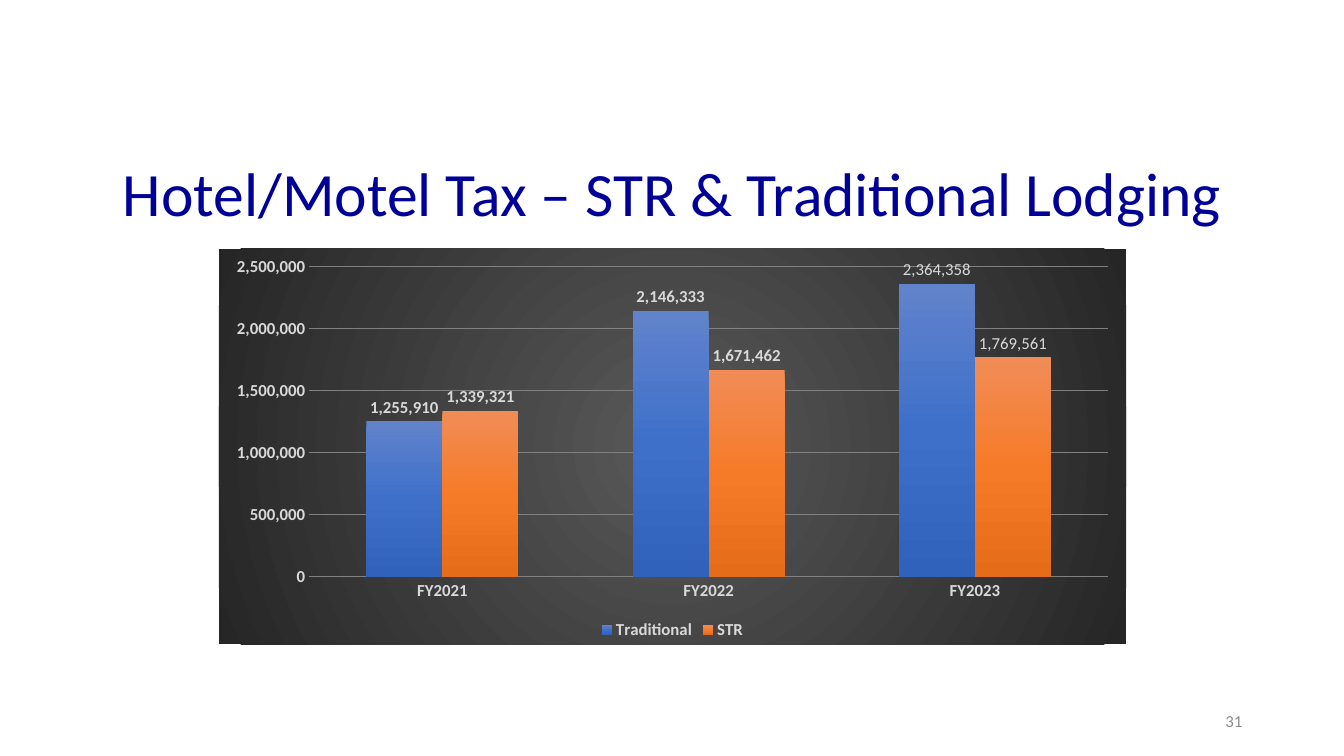
from lxml import etree
from pptx import Presentation
from pptx.chart.data import CategoryChartData
from pptx.dml.color import RGBColor
from pptx.enum.chart import XL_CHART_TYPE as ChartType
from pptx.enum.chart import XL_LABEL_POSITION as LabelPosition
from pptx.enum.chart import XL_LEGEND_POSITION as LegendPosition
from pptx.enum.chart import XL_TICK_MARK as TickMark
from pptx.enum.text import MSO_ANCHOR as Anchor
from pptx.enum.text import PP_ALIGN as Align
from pptx.oxml import parse_xml
from pptx.oxml.ns import nsdecls, qn
from pptx.util import Inches, Pt

FONT = "Calibri"
COLORS = {
    "title": "000099", "number": "8C8C8C", "label": "D9D9D9", "grid": "808080",
}
BACKDROP = ["595959", "262626"]
YEARS = ["FY2021", "FY2022", "FY2023"]
LODGING = [
    ("Traditional", [1255910, 2146333, 2364358], ["6183CB", "3E70CA", "3062BB"]),
    ("STR", [1339321, 1671462, 1769561], ["F18C57", "F67B28", "E56C19"]),
]
NUMBER_FORMAT = "#,##0"


def set_font(font, size, color, bold=False):
    font.name, font.size, font.bold = FONT, Pt(size), bold
    font.color.rgb = RGBColor.from_string(COLORS[color])


def gradient(colors, direction):
    """Evenly spaced gradient stops, followed by the direction element."""
    step = 100000 // (len(colors) - 1)
    stops = "".join(
        f'<a:gs pos="{i * step}"><a:srgbClr val="{color}"/></a:gs>'
        for i, color in enumerate(colors))
    return parse_xml(f'<a:gradFill {nsdecls("a")} rotWithShape="1">'
                     f'<a:gsLst>{stops}</a:gsLst>{direction}</a:gradFill>')


def add_text(page, box, text, size, color, align, spacing=1.0):
    frame = page.shapes.add_textbox(*map(Inches, box)).text_frame
    frame.word_wrap = True
    frame.vertical_anchor = Anchor.MIDDLE
    para = frame.paragraphs[0]
    para.text = text
    para.alignment = align
    para.line_spacing = spacing
    set_font(para.font, size, color)


def style_series(series, colors):
    properties = series.format.fill and series._element.get_or_add_spPr()
    properties.insert(0, gradient(colors, '<a:lin ang="5400000" scaled="0"/>'))
    labels = series.data_labels
    labels.show_value = True
    labels.number_format = NUMBER_FORMAT
    labels.number_format_is_linked = False
    labels.position = LabelPosition.OUTSIDE_END
    set_font(labels.font, 12, "label", bold=True)

    # The latest year is labelled in regular weight
    latest = series.points[len(YEARS) - 1].data_label
    set_font(latest.font, 12, "label")
    latest.position = LabelPosition.OUTSIDE_END


def add_tax_chart(page, box):
    data = CategoryChartData(number_format=NUMBER_FORMAT)
    data.categories = YEARS
    for name, values, _ in LODGING:
        data.add_series(name, values)
    chart = page.shapes.add_chart(
        ChartType.COLUMN_CLUSTERED, *map(Inches, box), data).chart
    chart.has_title = False
    set_font(chart.font, 10, "label")

    # Dark radial backdrop
    backdrop = etree.Element(qn("c:spPr"))
    backdrop.append(gradient(
        BACKDROP, '<a:path path="circle">'
        '<a:fillToRect l="50000" t="50000" r="50000" b="50000"/></a:path>'))
    chart.font  # the text properties follow the backdrop
    chart._chartSpace.find(qn("c:txPr")).addprevious(backdrop)

    # Axes and gridlines
    for axis in (chart.category_axis, chart.value_axis):
        axis.major_tick_mark = axis.minor_tick_mark = TickMark.NONE
        axis.format.line.fill.background()
        set_font(axis.tick_labels.font, 12, "label", bold=True)
    scale = chart.value_axis
    scale.minimum_scale, scale.maximum_scale, scale.major_unit = 0, 2500000, 500000
    scale.tick_labels.number_format = NUMBER_FORMAT
    scale.tick_labels.number_format_is_linked = False
    grid = scale.major_gridlines.format.line
    grid.width = Pt(0.75)
    grid.color.rgb = RGBColor.from_string(COLORS["grid"])

    # Legend
    chart.has_legend = True
    chart.legend.position = LegendPosition.BOTTOM
    chart.legend.include_in_layout = False
    set_font(chart.legend.font, 12, "label", bold=True)

    # Columns
    plot = chart.plots[0]
    plot.gap_width, plot.overlap = 150, 0
    plot.vary_by_categories = False
    for series, (_, _, colors) in zip(plot.series, LODGING):
        style_series(series, colors)


def main():
    deck = Presentation()
    deck.slide_width, deck.slide_height = Inches(13.33), Inches(7.5)
    page = deck.slides.add_slide(deck.slide_layouts[6])
    add_text(page, (0.92, 1.44, 11.5, 1.03),
             "Hotel/Motel Tax – STR & Traditional Lodging",
             44, "title", Align.CENTER, spacing=0.9)
    add_tax_chart(page, (2.17, 2.47, 9, 3.92))
    add_text(page, (9.42, 6.95, 3, 0.4), "31", 12, "number", Align.RIGHT)
    deck.save("out.pptx")


if __name__ == "__main__":
    main()
